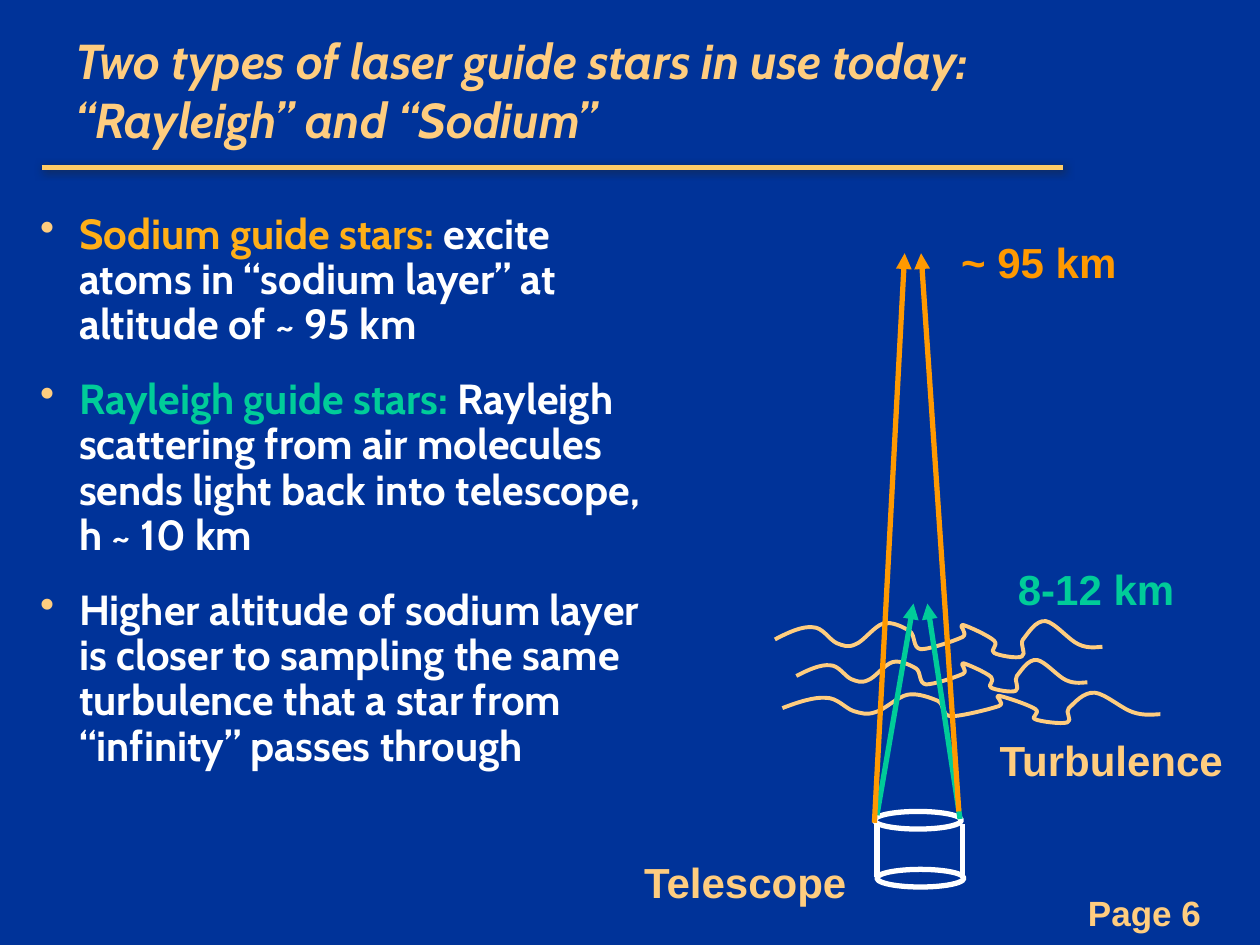
import dataclasses

import lxml.etree
import pptx
import pptx.dml.color
import pptx.enum.shapes
import pptx.enum.text
import pptx.oxml.ns
import pptx.util

ALIGN = pptx.enum.text.PP_ALIGN
ANCHOR = pptx.enum.text.MSO_ANCHOR

# Start point, then cubic segments of two control points and an end point
WAVE_SIZE = (260, 32)
WAVE_POINTS = [
    (0, 16),
    (11, 10), (22, 5), (30, 6), (38, 6), (43, 16), (49, 19),
    (54, 21), (58, 23), (64, 20), (70, 18), (79, 5), (86, 3),
    (93, 1), (102, 6), (107, 9), (112, 13), (109, 23), (116, 24),
    (123, 24), (143, 17), (149, 14), (154, 11), (145, 4), (149, 4),
    (153, 5), (170, 13), (174, 17), (178, 21), (170, 25), (174, 27),
    (177, 29), (192, 32), (196, 30), (200, 28), (194, 20), (197, 16),
    (201, 11), (207, 0), (215, 1), (222, 2), (234, 17), (241, 20),
    (249, 24), (257, 22), (260, 22),
]


@dataclasses.dataclass(frozen=True)
class Theme:
    background: str = "003399"
    rule: str = "FFCC66"
    shadow: str = "232323"
    accent: str = "FFCD7F"
    text: str = "FFFFFF"
    sodium_text: str = "FFAF18"
    sodium: str = "FF9900"
    rayleigh: str = "00CC99"
    heading_font: str = "Cabin"
    label_font: str = "Arial"
    title_size: int = 28
    body_size: int = 24
    page_size: int = 20
    thick: float = 3
    thin: float = 2.25


def rgb(colour):
    return pptx.dml.color.RGBColor.from_string(colour)


def add_element(parent, tag, **attributes):
    element = lxml.etree.SubElement(parent, pptx.oxml.ns.qn(tag))
    for name, value in attributes.items():
        element.set(name, str(value))
    return element


class SlidePainter:
    """Draws on one slide; lengths are cells of a 100 by 75 grid."""

    def __init__(self, presentation, theme):
        self.theme = theme
        self.cell = presentation.slide_width / 100
        self.slide = presentation.slides.add_slide(presentation.slide_layouts[6])
        self.slide.background.fill.solid()
        self.slide.background.fill.fore_color.rgb = rgb(theme.background)

    def grid(self, *lengths):
        return [round(length * self.cell) for length in lengths]

    def outline(self, shape, colour, width):
        shape.line.color.rgb = rgb(colour)
        shape.line.width = pptx.util.Pt(width)

    def line(self, start, end, colour, arrow=False, shadow=False):
        connector = self.slide.shapes.add_connector(
            pptx.enum.shapes.MSO_CONNECTOR.STRAIGHT, *self.grid(*start, *end))
        self.outline(connector, colour, self.theme.thick)
        if arrow:
            add_element(connector.line._get_or_add_ln(), "a:tailEnd", type="triangle")
        effects = add_element(connector._element.spPr, "a:effectLst")
        if shadow:
            outer = add_element(effects, "a:outerShdw", blurRad=pptx.util.Pt(5),
                                dist=pptx.util.Pt(1.4), dir=45 * 60000)
            tint = add_element(outer, "a:srgbClr", val=self.theme.shadow)
            add_element(tint, "a:alpha", val=75000)

    def ellipse(self, left, top, width, height, colour):
        shape = self.slide.shapes.add_shape(
            pptx.enum.shapes.MSO_SHAPE.OVAL, *self.grid(left, top, width, height))
        shape.shadow.inherit = False
        shape.fill.background()
        self.outline(shape, colour, self.theme.thick)

    def wave(self, left, top, width, height):
        """Fit the turbulence curve into the given box."""
        width, height = self.grid(width, height)
        scale = (width / WAVE_SIZE[0], height / WAVE_SIZE[1])
        builder = self.slide.shapes.build_freeform(*WAVE_POINTS[0], scale=scale)
        builder.add_line_segments(WAVE_POINTS[1:], close=False)
        shape = builder.convert_to_shape(*self.grid(left, top))
        shape.shadow.inherit = False
        shape.fill.background()
        self.outline(shape, self.theme.accent, self.theme.thin)
        # Regroup every three straight segments as one cubic curve
        segments = list(shape._element.iter(pptx.oxml.ns.qn("a:lnTo")))
        outline_path = segments[0].getparent()
        for index in range(0, len(segments), 3):
            curve = add_element(outline_path, "a:cubicBezTo")
            for segment in segments[index:index + 3]:
                curve.append(segment[0])
                outline_path.remove(segment)

    def text(self, box, paragraphs, size, font, align=ALIGN.LEFT,
             anchor=ANCHOR.TOP, wrap=True, italic=False, bullets=False):
        """Each paragraph is a list of (words, colour) runs."""
        frame = self.slide.shapes.add_textbox(*self.grid(*box)).text_frame
        frame.word_wrap = wrap
        frame.vertical_anchor = anchor
        for index, runs in enumerate(paragraphs):
            paragraph = frame.add_paragraph() if index else frame.paragraphs[0]
            if bullets:
                self.bullet(paragraph)
                paragraph.line_spacing = 0.9
                if index:
                    paragraph.space_before = pptx.util.Pt(0.7 * size)
            paragraph.alignment = align
            for words, colour in runs:
                run = paragraph.add_run()
                run.text = words
                run.font.name = font
                run.font.size = pptx.util.Pt(size)
                run.font.bold = True
                run.font.italic = italic
                run.font.color.rgb = rgb(colour)

    def bullet(self, paragraph):
        properties = paragraph._p.get_or_add_pPr()
        indent = pptx.util.Inches(0.31)
        properties.set("marL", str(indent))
        properties.set("indent", str(-indent))
        colour = add_element(properties, "a:buClr")
        add_element(colour, "a:srgbClr", val=self.theme.accent)
        add_element(properties, "a:buChar", char="•")

    def label(self, box, words, colour):
        self.text(box, [[(words, colour)]], self.theme.body_size,
                  self.theme.label_font, ALIGN.CENTER, ANCHOR.MIDDLE, wrap=False)


def main():
    presentation = pptx.Presentation()
    presentation.slide_width = pptx.util.Inches(10)
    presentation.slide_height = pptx.util.Inches(7.5)
    theme = Theme()
    painter = SlidePainter(presentation, theme)

    painter.line((3.3, 13.3), (84.4, 13.3), theme.rule, shadow=True)
    painter.text((72.2, 70.3, 24.1, 4.3), [[("Page 6", theme.accent)]],
                 theme.page_size, theme.label_font, ALIGN.RIGHT)
    title = "Two types of laser guide stars in use today: “Rayleigh” and “Sodium”"
    painter.text((5, 0, 78.3, 14.2), [[(title, theme.accent)]], theme.title_size,
                 theme.heading_font, anchor=ANCHOR.MIDDLE, italic=True)
    painter.text((2.2, 16.4, 50.6, 54), [
        [("Sodium guide stars: ", theme.sodium_text),
         ("excite atoms in “sodium layer” at altitude of ~ 95 km", theme.text)],
        [("Rayleigh guide stars: ", theme.rayleigh),
         ("Rayleigh scattering from air molecules sends light back into "
          "telescope, h ~ 10 km", theme.text)],
        [("Higher altitude of sodium layer is closer to sampling the same "
          "turbulence that a star from “infinity” passes through", theme.text)],
    ], theme.body_size, theme.heading_font, bullets=True)

    for left, top in [(69.4, 64.4), (69.6, 69)]:
        painter.ellipse(left, top, 6.9, 1.4, theme.text)
    for x, top in [(69.6, 65.3), (76.4, 65.4)]:
        painter.line((x, top), (x, top + 4.3), theme.text)

    for box in [(63.2, 52.3, 23.1, 2.7), (62.1, 54.9, 30, 2.6), (61.5, 49.2, 26, 3.1)]:
        painter.wave(*box)

    for start, end, colour in [
        ((69.6, 64.7), (72.5, 47.9), theme.rayleigh),
        ((76.2, 65), (73.6, 47.9), theme.rayleigh),
        ((69.4, 65.3), (71.8, 20.1), theme.sodium),
        ((76.1, 64.4), (73.1, 20.1), theme.sodium),
    ]:
        painter.line(start, end, colour, arrow=True)

    painter.label((50, 67.5, 18.3, 5), "Telescope", theme.accent)
    painter.label((78.2, 57.8, 20, 5), "Turbulence", theme.accent)
    painter.label((79.8, 44.2, 14.4, 5), "8-12 km", theme.rayleigh)
    painter.label((75.3, 18.3, 14.3, 5), "~ 95 km", theme.sodium)

    presentation.save("out.pptx")


if __name__ == "__main__":
    main()
